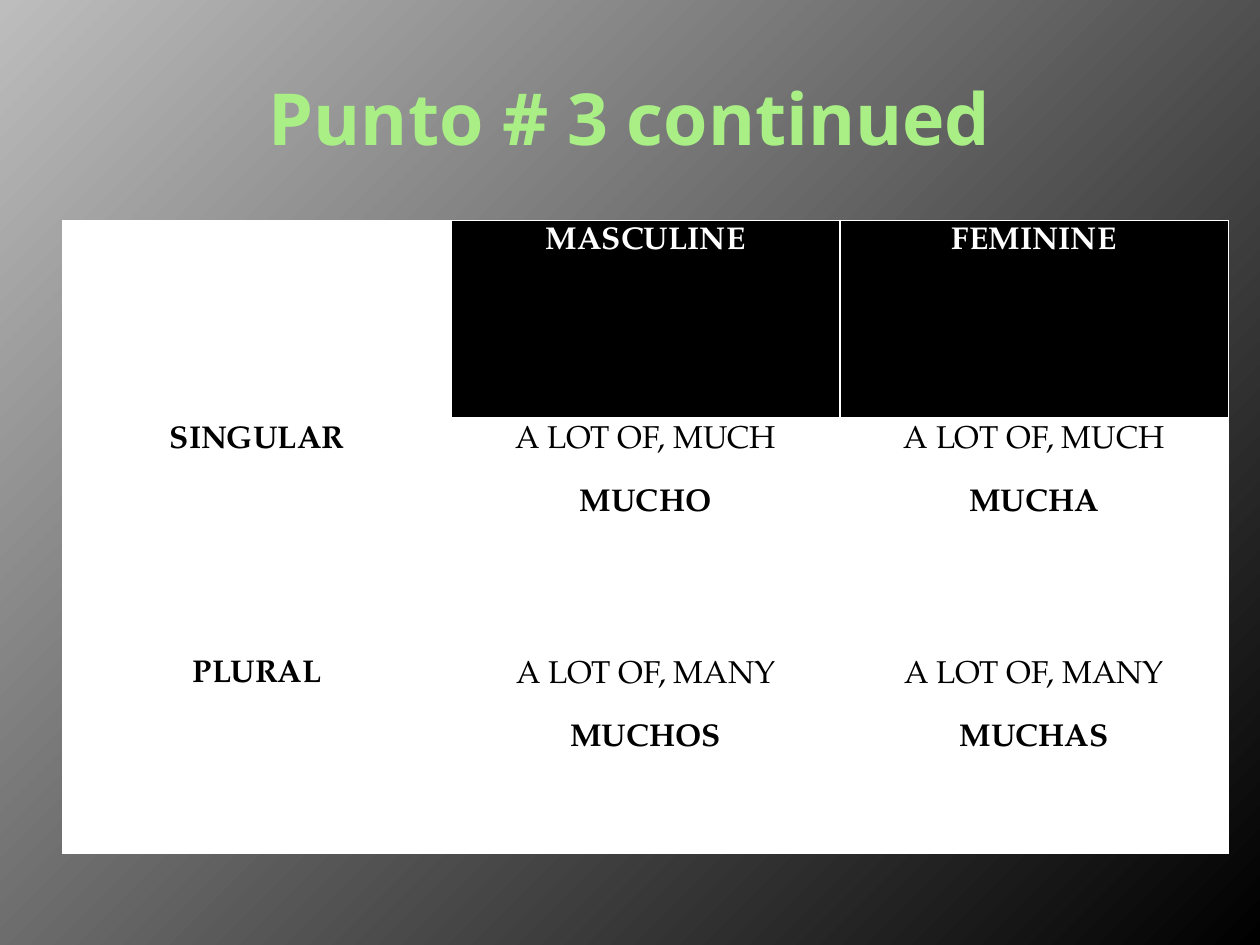
from lxml import etree
from pptx import Presentation
from pptx.dml.color import RGBColor
from pptx.enum.text import MSO_ANCHOR, PP_ALIGN
from pptx.oxml.ns import qn
from pptx.util import Inches, Pt

CENTER = PP_ALIGN.CENTER
MIDDLE = MSO_ANCHOR.MIDDLE
BLANK_LAYOUT = 6

BLACK, WHITE, GRAY, GREEN = "000000", "FFFFFF", "BDBDBD", "A9EF86"

COLUMN_WIDTH = 9.25 / 3
ROW_HEIGHTS = (1.58, 1.86, 1.58)
# Each cell lists its paragraphs.
ROWS = (
    ((), ("MASCULINE",), ("FEMININE",)),
    (("SINGULAR",), ("A LOT OF, MUCH", "MUCHO"), ("A LOT OF, MUCH", "MUCHA")),
    (("PLURAL",), ("A LOT OF, MANY", "MUCHOS"), ("A LOT OF, MANY", "MUCHAS")),
)


def color(hex_string):
    return RGBColor.from_string(hex_string)


class SlideBuilder:
    title_font = "Noto Sans"
    table_font = "TeX Gyre Pagella"

    def __init__(self, slide):
        self.slide = slide

    def background(self, start, end):
        """Fill the background with a gradient from the top left corner."""
        fill = self.slide.background.fill
        fill.gradient()
        for stop, position, shade in zip(fill.gradient_stops, (0, 1), (start, end)):
            stop.position = position
            stop.color.rgb = color(shade)
        linear = next(self.slide.element.iter(qn("a:lin")))
        circle = etree.Element(qn("a:path"), path="circle")
        etree.SubElement(circle, qn("a:fillToRect"), r="100000", b="100000")
        linear.getparent().replace(linear, circle)

    def set_text(self, paragraph, text, font, size, text_color, bold):
        paragraph.text = text
        paragraph.alignment = CENTER
        paragraph.font.name = font
        paragraph.font.size = Pt(size)
        paragraph.font.bold = bold
        paragraph.font.color.rgb = color(text_color)

    def title(self, text, left, top, width, height):
        shape = self.slide.shapes.add_textbox(
            Inches(left), Inches(top), Inches(width), Inches(height))
        frame = shape.text_frame
        frame.word_wrap = True
        frame.vertical_anchor = MIDDLE
        self.set_text(frame.paragraphs[0], text, self.title_font, 41, GREEN, True)

    def borders(self, cell, bottom_width):
        """Draw white cell borders, one point wide except at the bottom."""
        properties = cell._tc.get_or_add_tcPr()
        widths = {"a:lnL": 1, "a:lnR": 1, "a:lnT": 1, "a:lnB": bottom_width}
        for index, (side, width) in enumerate(widths.items()):
            line = etree.Element(qn(side), w=str(Pt(width)))
            fill = etree.SubElement(line, qn("a:solidFill"))
            etree.SubElement(fill, qn("a:srgbClr"), val=WHITE)
            properties.insert(index, line)

    def cell(self, cell, lines, is_header):
        is_dark = is_header and bool(lines)
        cell.fill.solid()
        cell.fill.fore_color.rgb = color(BLACK if is_dark else WHITE)
        self.borders(cell, 3 if is_header else 1)
        frame = cell.text_frame
        for index, text in enumerate(lines):
            paragraph = frame.add_paragraph() if index else frame.paragraphs[0]
            is_last = index == len(lines) - 1
            self.set_text(paragraph, text, self.table_font, 18,
                          WHITE if is_dark else BLACK, is_last)
            if index:
                paragraph.space_before = Pt(18)

    def table(self, rows, left, top):
        column_count = len(rows[0])
        table = self.slide.shapes.add_table(
            len(rows), column_count, Inches(left), Inches(top),
            Inches(COLUMN_WIDTH * column_count), Inches(sum(ROW_HEIGHTS))).table
        for column in table.columns:
            column.width = Inches(COLUMN_WIDTH)
        for row_index, (row, height) in enumerate(zip(rows, ROW_HEIGHTS)):
            table.rows[row_index].height = Inches(height)
            for column_index, lines in enumerate(row):
                self.cell(table.cell(row_index, column_index), lines, row_index == 0)


def main():
    presentation = Presentation()
    presentation.slide_width = Inches(10)
    presentation.slide_height = Inches(7.5)
    slide = presentation.slides.add_slide(presentation.slide_layouts[BLANK_LAYOUT])
    builder = SlideBuilder(slide)
    builder.background(GRAY, BLACK)
    builder.title("Punto # 3 continued", 0.5, 0.3, 9, 1.25)
    builder.table(ROWS, 0.5, 1.75)
    presentation.save("out.pptx")


if __name__ == "__main__":
    main()
